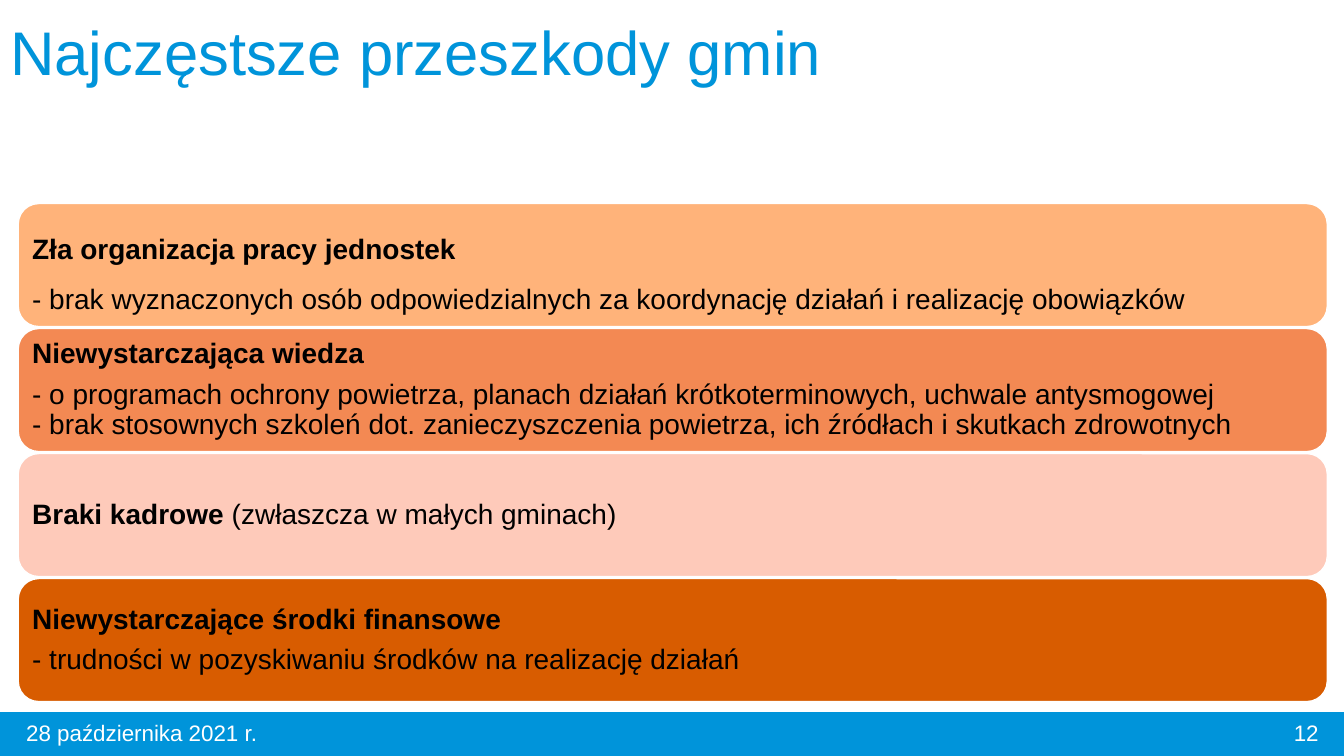
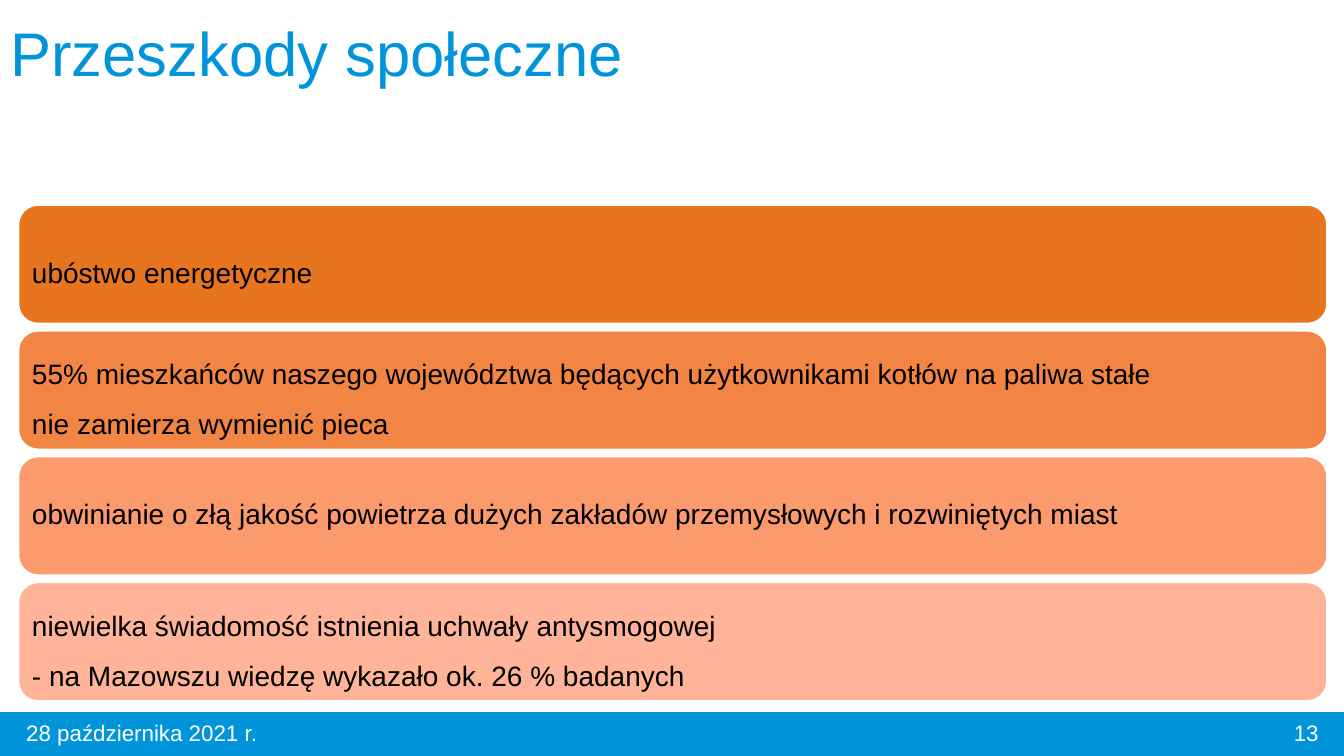
"""Build two slides on the obstacles that municipalities and residents face."""
from pptx import Presentation
from pptx import util as u
from pptx.dml.color import RGBColor
from pptx.enum import shapes, text

FONT = "Arial"
BLUE, WHITE, BLACK = "0094DA", "FFFFFF", "000000"
DATE = "28 października 2021 r."
FIRST_NUMBER = 12
WIDTH, HEIGHT = 33.87, 19.05
BAND_TOP, BAND_HEIGHT = 17.96, 1.09
CARD_LEFT, CARD_WIDTH, CARD_INSET = 0.46, 32.99, 0.2
TIGHT, LOOSE = (0.9, 7), (1.5, 6)

# Each card: fill, (line spacing, space after), paragraphs as (bold lead, plain rest)
SLIDES = [
    {
        "title": "Najczęstsze przeszkody gmin", "title_size": (27, 2.79),
        "top": 5.13, "height": 3.1, "pitch": 3.15, "outline": 1,
        "cards": [
            ("FFB37A", LOOSE, [
                ("Zła organizacja pracy jednostek",
                 "\n- brak wyznaczonych osób odpowiedzialnych za koordynację działań i realizację obowiązków")]),
            ("F38953", TIGHT, [
                ("Niewystarczająca wiedza", ""),
                ("", "- o programach ochrony powietrza, planach działań krótkoterminowych, uchwale antysmogowej\n"
                     "- brak stosownych szkoleń dot. zanieczyszczenia powietrza, ich źródłach i skutkach zdrowotnych")]),
            ("FECABA", TIGHT, [("Braki kadrowe ", "(zwłaszcza w małych gminach)")]),
            ("D85C00", TIGHT, [
                ("Niewystarczające środki finansowe", ""),
                ("", "- trudności w pozyskiwaniu środków na realizację działań")]),
        ],
    },
    {
        "title": "Przeszkody społeczne", "title_size": (25.45, 2.84),
        "top": 5.16, "height": 3, "pitch": 3.17, "outline": 1.5,
        "cards": [
            ("E7741E", LOOSE, [("", "ubóstwo energetyczne")]),
            ("F28544", LOOSE, [
                ("", "55% mieszkańców naszego województwa będących użytkownikami kotłów na paliwa stałe\n"
                     "nie zamierza wymienić pieca")]),
            ("FA9A6D", TIGHT, [
                ("", "obwinianie o złą jakość powietrza dużych zakładów przemysłowych i rozwiniętych miast")]),
            ("FFB499", (1.5, 7), [
                ("", "niewielka świadomość istnienia uchwały antysmogowej\n"
                     "- na Mazowszu wiedzę wykazało ok. 26 % badanych")]),
        ],
    },
]


def color(value):
    """Turn a hex string into a colour."""
    return RGBColor.from_string(value)


def style(span, size, value, bold=False):
    """Format one run."""
    span.font.name, span.font.size, span.font.bold = FONT, u.Pt(size), bold
    span.font.color.rgb = color(value)


def add_panel(page, kind, place, fill, line, weight):
    """Add a filled, outlined shape without shadow."""
    panel = page.shapes.add_shape(kind, *map(u.Cm, place))
    panel.shadow.inherit = False
    panel.fill.solid()
    panel.fill.fore_color.rgb = color(fill)
    panel.line.color.rgb = color(line)
    panel.line.width = u.Pt(weight)
    return panel


def add_layout_band(page):
    """Place the blue footer band on the layout that all slides share."""
    band = add_panel(page, shapes.MSO_SHAPE.RECTANGLE, (0, BAND_TOP, WIDTH, BAND_HEIGHT), BLUE, BLUE, 1)
    band.element.nvSpPr.cNvPr.set("id", "20")
    page.slide_layout.shapes.element.insert(2, band.element)


def set_title(page, words, size):
    """Fill, place and format the title placeholder."""
    title = page.shapes.title
    title.left, title.top = u.Cm(0), u.Cm(0)
    title.width, title.height = map(u.Cm, size)
    frame = title.text_frame
    frame.text = words
    frame.auto_size = text.MSO_AUTO_SIZE.NONE
    frame.vertical_anchor = text.MSO_ANCHOR.MIDDLE
    para = frame.paragraphs[0]
    para.alignment, para.line_spacing = text.PP_ALIGN.LEFT, 0.9
    style(para.runs[0], 44, BLUE)


def add_footer(page, words, left, width, alignment):
    """Add one white footer text on the band."""
    box = page.shapes.add_textbox(*map(u.Cm, (left, BAND_TOP, width, 1.02)))
    frame = box.text_frame
    frame.word_wrap = True
    frame.vertical_anchor = text.MSO_ANCHOR.MIDDLE
    frame.text = words
    frame.paragraphs[0].alignment = alignment
    style(frame.paragraphs[0].runs[0], 16, WHITE)


def fill_paragraph(para, pieces):
    """Write a bold lead and a plain rest, with line breaks where they occur."""
    for piece, bold in zip(pieces, (True, False)):
        for index, line in enumerate(piece.split("\n")):
            if index:
                para.add_line_break()
            if line:
                span = para.add_run()
                span.text = line
                style(span, 20, BLACK, bold)


def add_card(page, top, height, outline, card):
    """Add one rounded card with its paragraphs."""
    fill, (line_spacing, space_after), paragraphs = card
    box = add_panel(page, shapes.MSO_SHAPE.ROUNDED_RECTANGLE,
                    (CARD_LEFT, top, CARD_WIDTH, height), fill, WHITE, outline)
    frame = box.text_frame
    frame.word_wrap = True
    frame.vertical_anchor = text.MSO_ANCHOR.MIDDLE
    frame.margin_left = frame.margin_right = frame.margin_top = frame.margin_bottom = u.Cm(CARD_INSET)
    for index, pieces in enumerate(paragraphs):
        para = frame.add_paragraph() if index else frame.paragraphs[0]
        para.alignment = text.PP_ALIGN.LEFT
        para.line_spacing, para.space_after = line_spacing, u.Pt(space_after)
        fill_paragraph(para, pieces)


def main():
    """Build and save the deck."""
    deck = Presentation()
    deck.slide_width, deck.slide_height = u.Cm(WIDTH), u.Cm(HEIGHT)
    layout = deck.slide_layouts.get_by_name("Title Only")
    for number, content in enumerate(SLIDES, FIRST_NUMBER):
        page = deck.slides.add_slide(layout)
        if number == FIRST_NUMBER:
            add_layout_band(page)
        set_title(page, content["title"], content["title_size"])
        for row, card in enumerate(content["cards"]):
            top = content["top"] + row * content["pitch"]
            add_card(page, top, content["height"], content["outline"], card)
        add_footer(page, DATE, 0.41, 10.16, text.PP_ALIGN.LEFT)
        add_footer(page, str(number), 25.86, 7.62, text.PP_ALIGN.RIGHT)
    deck.save("out.pptx")


if __name__ == "__main__":
    main()
